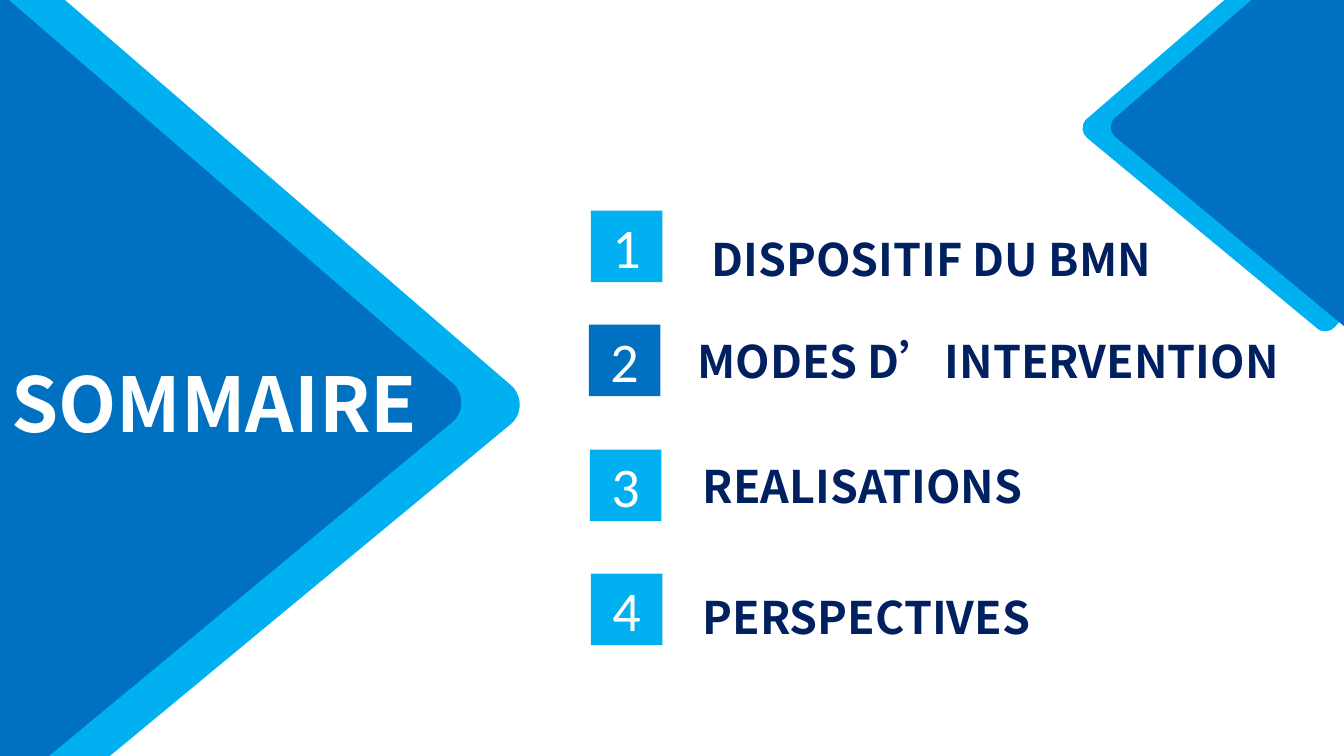
from dataclasses import dataclass
from math import cos, radians, sin

from lxml import etree
from pptx import Presentation
from pptx.dml.color import RGBColor
from pptx.enum.shapes import MSO_SHAPE
from pptx.enum.text import MSO_ANCHOR, PP_ALIGN
from pptx.oxml.ns import qn
from pptx.util import Emu, Pt

RECTANGLE = MSO_SHAPE.RECTANGLE
MIDDLE = MSO_ANCHOR.MIDDLE
LEFT, CENTER = PP_ALIGN.LEFT, PP_ALIGN.CENTER

PX = 9144
SKY, BLUE, NAVY, WHITE = "00B0F0", "0070C0", "002060", "FFFFFF"
HEADING_FONT, NUMBER_FONT = "Noto Sans CJK SC", "Calibri"
BADGE_SIZE = 71
TILT = 50.4

DIAMOND_START = (-244, -326)
DIAMOND_SEGMENTS = [
    [(-232, -336), (-35, -379), (-26, -367)],
    [(496, 84)],
    [(506, 96), (504, 112), (493, 121)],
    [(28, 506)],
    [(17, 516), (1, 514), (-9, 503)],
    [(-467, -51)],
    [(-477, -62), (-475, -78), (-464, -88)],
    [(-309, -216), (-398, -198), (-244, -326)],
]


@dataclass
class Diamond:
    x: int
    y: int
    color: str
    scale: float = 1.0
    mirror: int = 1


@dataclass
class Label:
    text: str
    x: int
    y: int
    w: int
    h: int = 86
    size: int = 32
    color: str = NAVY
    align: PP_ALIGN = LEFT


@dataclass
class Badge:
    number: str
    x: int
    y: int
    color: str = SKY


DIAMOND_PAIRS = [
    [Diamond(13, 301, SKY), Diamond(-45, 299, BLUE)],
    [Diamond(1320, 78, SKY, 0.49, -1), Diamond(1348, 77, BLUE, 0.49, -1)],
]
BADGES = [
    Badge("1", 586, 209),
    Badge("2", 584, 322, BLUE),
    Badge("3", 585, 446),
    Badge("4", 586, 569),
]
LABELS = [
    Label("SOMMAIRE", -18, 280, 461, 239, 54, WHITE, CENTER),
    Label("DISPOSITIF DU BMN", 653, 214, 542, align=CENTER),
    Label("MODES D’INTERVENTION", 682, 315, 653),
    Label("REALISATIONS", 687, 439, 559),
    Label("PERSPECTIVES", 687, 569, 624),
]


def px(value: int) -> Emu:
    return Emu(value * PX)


def rgb(color: str) -> RGBColor:
    return RGBColor.from_string(color)


def paint(sp, color: str) -> None:
    sp.shadow.inherit = False
    sp.fill.solid()
    sp.fill.fore_color.rgb = rgb(color)
    sp.line.fill.background()


def write(sp, text: str, font: str, size: int, color: str, align: PP_ALIGN, bold: bool) -> None:
    tf = sp.text_frame
    tf.word_wrap = True
    tf.vertical_anchor = MIDDLE
    p = tf.paragraphs[0]
    p.alignment = align
    r = p.add_run()
    r.text = text
    r.font.name = font
    r.font.size = Pt(size)
    r.font.bold = bold
    r.font.color.rgb = rgb(color)
    etree.SubElement(r.font._element, qn("a:ea"), typeface=font)


def round_corners(sp) -> None:
    lines = iter(list(sp._element.iter(qn("a:lnTo"))))
    for segment in DIAMOND_SEGMENTS:
        steps = [next(lines) for _ in segment]
        if len(steps) == 3:
            curve = etree.Element(qn("a:cubicBezTo"))
            steps[0].addprevious(curve)
            for step in steps:
                curve.append(step[0])
                step.getparent().remove(step)


def add_diamond(group, diamond: Diamond) -> None:
    c, n = cos(radians(TILT)), sin(radians(TILT))
    outline = [DIAMOND_START] + [point for segment in DIAMOND_SEGMENTS for point in segment]
    points = [
        (
            round((diamond.x + diamond.mirror * diamond.scale * (x * c + y * n)) * PX),
            round((diamond.y + diamond.scale * (y * c - x * n)) * PX),
        )
        for x, y in outline
    ]
    builder = group.shapes.build_freeform(*points[0], scale=1.0)
    builder.add_line_segments(points[1:], close=True)
    sp = builder.convert_to_shape()
    round_corners(sp)
    sp.rotation = diamond.mirror * TILT % 360
    paint(sp, diamond.color)


def add_badge(s, badge: Badge) -> None:
    sp = s.shapes.add_shape(
        RECTANGLE, px(badge.x), px(badge.y), px(BADGE_SIZE), px(BADGE_SIZE)
    )
    paint(sp, badge.color)
    write(sp, badge.number, NUMBER_FONT, 40, WHITE, CENTER, False)


def add_label(s, label: Label) -> None:
    sp = s.shapes.add_textbox(px(label.x), px(label.y), px(label.w), px(label.h))
    write(sp, label.text, HEADING_FONT, label.size, label.color, label.align, True)


def main() -> None:
    prs = Presentation()
    prs.slide_width, prs.slide_height = px(1333), px(750)
    s = prs.slides.add_slide(prs.slide_layouts[6])
    for pair in DIAMOND_PAIRS:
        group = s.shapes.add_group_shape()
        for diamond in pair:
            add_diamond(group, diamond)
    for badge in BADGES:
        add_badge(s, badge)
    for label in LABELS:
        add_label(s, label)
    prs.save("out.pptx")


if __name__ == "__main__":
    main()
